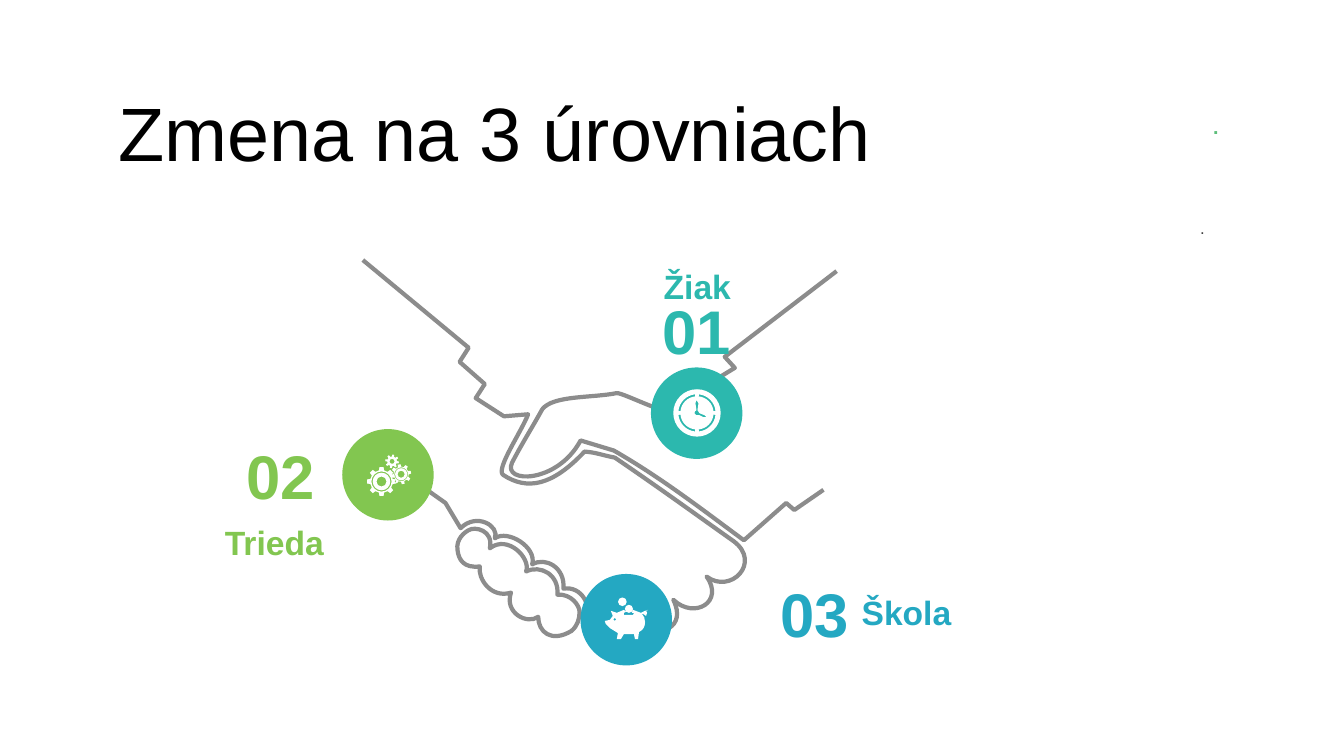
from dataclasses import dataclass
from math import cos, radians, sin, tan

from lxml import etree
from pptx import Presentation
from pptx.dml.color import RGBColor
from pptx.enum.shapes import MSO_SHAPE
from pptx.enum.text import MSO_ANCHOR, MSO_AUTO_SIZE, PP_ALIGN
from pptx.oxml.ns import qn
from pptx.util import Pt

ELLIPSE = MSO_SHAPE.OVAL
TOP, MIDDLE = MSO_ANCHOR.TOP, MSO_ANCHOR.MIDDLE
LEFT, CENTER, RIGHT = PP_ALIGN.LEFT, PP_ALIGN.CENTER, PP_ALIGN.RIGHT
FIT_SHAPE = MSO_AUTO_SIZE.SHAPE_TO_FIT_TEXT


@dataclass(frozen=True)
class Theme:
    font: str = "Arial"
    black: str = "000000"
    white: str = "FFFFFF"
    outline: str = "8C8C8C"
    pupil: str = "2CB8AE"
    classroom: str = "82C650"
    school: str = "24A8C2"
    dark: str = "404040"
    mint: str = "5CBE7A"
    title_size: int = 54
    number_size: int = 44
    label_size: int = 24
    mark_size: int = 14
    small_size: int = 12


THEME = Theme()
GRID = 0.72
POINTS_PER_COMMAND = {"M": 1, "L": 1, "C": 3}
BADGE_SIZE = 65.3

RIGHT_HAND = """M 830 269 L 719 354 729 365 706 379 712 389 681 409
C 669 417 620 390 612 390 587 395 549 392 538 406 527 426 519 438 508 459
498 480 553 480 576 437 L 609 447 C 656 474 696 505 738 536
L 780 499 788 506 817 486"""

LEFT_HAND = """M 360 258 L 465 345 456 359 481 381 472 395 500 413 524 411
C 517 429 492 465 499 471 523 487 548 482 580 448 592 449 595 451 610 454
657 486 687 508 728 537 756 558 725 590 701 572 719 597 689 615 668 595
682 623 654 633 635 621 642 640 612 653 581 621 589 601 577 581 559 584
561 563 541 552 528 560 533 543 504 525 491 534 496 522 473 508 457 524
L 442 499 418 482 411 494 377 475"""

FINGERS = """M 454 546 C 455 555 460 564 476 562 474 574 487 594 507 588
500 608 523 620 534 612 534 627 547 638 567 626 573 621 575 614 575 607
575 601 567 589 553 590 555 570 536 560 522 567 527 554 504 530 486 544
490 526 471 522 465 526 461 528 452 535 454 546"""

PIGGY_BODY = """M 643 605 L 641 606 642 608 641 611 638 609 637 609
C 639 611 640 614 640 617 640 622 638 625 634 627
L 633 634 630 634 629 629 619 629 616 634 612 634 613 628 605 623 601 619 600 616
605 615 608 611 606 606 612 608 619 605 621 607 619 608 619 610 628 610 629 608 627 608 628 605
636 608 640 606"""

CLOCK_HANDS = """M 691 397 L 690 400 691 407 C 688 408 688 413 694 412
L 698 414 701 414 699 412 694 410 692 407 693 400"""


def trace(outline):
    segments, numbers, command = [], [], ""
    for token in outline.split():
        if token in POINTS_PER_COMMAND:
            command = token
            continue
        numbers.append(float(token))
        if len(numbers) == 2 * POINTS_PER_COMMAND[command]:
            segments.append(list(zip(numbers[::2], numbers[1::2])))
            numbers = []
    return segments


def polar(cx, cy, radius, degrees):
    angle = radians(degrees)
    return cx + radius * cos(angle), cy + radius * sin(angle)


def arc(cx, cy, radius, start, end):
    reach = radius * 4 / 3 * tan(radians(end - start) / 4)
    first, last = polar(cx, cy, radius, start), polar(cx, cy, radius, end)
    return [polar(*first, reach, start + 90), polar(*last, -reach, end + 90), last]


def circle(cx, cy, radius):
    return [[polar(cx, cy, radius, 0)]] + [arc(cx, cy, radius, start, start + 90)
                                           for start in range(0, 360, 90)]


def arc_band(cx, cy, inner, outer, start, end):
    return [[polar(cx, cy, outer, start)], arc(cx, cy, outer, start, end),
            [polar(cx, cy, inner, end)], arc(cx, cy, inner, end, start)]


def gear(cx, cy, root, tip, phase, holes):
    profile = ((root, -13), (tip, -8), (tip, 8), (root, 13))
    rim = [[polar(cx, cy, radius, phase + tooth * 45 + offset)]
           for tooth in range(8) for radius, offset in profile]
    return [rim] + [circle(cx, cy, radius) for radius in holes]


def bend_curves(shape, contours):
    nodes = iter(list(shape._element.find(".//" + qn("a:path"))))
    for segment in (segment for contour in contours for segment in contour):
        node = next(nodes)
        if node.tag == qn("a:close"):
            node = next(nodes)
        if len(segment) == 3:
            node.tag_name = None
            curve = etree.Element(qn("a:cubicBezTo"))
            node.addprevious(curve)
            for corner in (node, next(nodes), next(nodes)):
                curve.append(corner[0])
                corner.getparent().remove(corner)


def add_outline(slide, contours, fill=None, line=None, closed=True):
    scaled = [[(Pt(x * GRID), Pt(y * GRID)) for segment in contour for x, y in segment]
              for contour in contours]
    builder = slide.shapes.build_freeform(*scaled[0][0])
    for index, (start, *rest) in enumerate(scaled):
        if index:
            builder.move_to(*start)
        builder.add_line_segments(rest, close=closed)
    shape = builder.convert_to_shape()
    bend_curves(shape, contours)
    paint(shape, fill, line)


def paint(shape, fill=None, line=None):
    shape.shadow.inherit = False
    if fill:
        shape.fill.solid()
        shape.fill.fore_color.rgb = RGBColor.from_string(fill)
    else:
        shape.fill.background()
    if line:
        shape.line.color.rgb = RGBColor.from_string(line)
        shape.line.width = Pt(3)
    else:
        shape.line.fill.background()


def add_badge(slide, left, top, color):
    badge = slide.shapes.add_shape(ELLIPSE, Pt(left), Pt(top), Pt(BADGE_SIZE), Pt(BADGE_SIZE))
    paint(badge, color)


def add_label(slide, words, box, size, color, bold=True, align=LEFT, anchor=TOP):
    frame = slide.shapes.add_textbox(*map(Pt, box)).text_frame
    frame.word_wrap = True
    frame.auto_size = FIT_SHAPE
    frame.vertical_anchor = anchor
    frame.text = words
    paragraph = frame.paragraphs[0]
    paragraph.alignment = align
    run = paragraph.runs[0]
    run.font.name = THEME.font
    run.font.size = Pt(size)
    run.font.bold = bold
    run.font.color.rgb = RGBColor.from_string(color)
    return run


def add_number(slide, words, left, top, color):
    run = add_label(slide, words, (left, top, 75.6, 60.5), THEME.number_size, color, align=CENTER)
    edge = etree.Element(qn("a:ln"), w=str(Pt(1)))
    fill = etree.SubElement(edge, qn("a:solidFill"))
    etree.SubElement(fill, qn("a:srgbClr"), val=THEME.white)
    run.font._element.insert(0, edge)


def add_icons(slide):
    piggy = [trace(PIGGY_BODY), circle(610, 614.5, 1.5), circle(624, 604, 4), circle(617.5, 597, 4.3)]
    clock_center = (691.5, 409.7)
    clock = [circle(*clock_center, 23.5), trace(CLOCK_HANDS)]
    clock += [arc_band(*clock_center, 16.5, 18.5, start + 6, start + 84) for start in range(0, 360, 90)]
    gears = (gear(378.5, 477.7, 11.3, 14.5, 0, (10, 8.7, 5))
             + gear(398, 470.5, 7.5, 10, -12, (6.8, 6, 3.5))
             + gear(389, 457.7, 4.8, 6.8, -80, (2.5,)))
    for icon in (piggy, clock, gears):
        add_outline(slide, icon, fill=THEME.white)


def main():
    deck = Presentation()
    deck.slide_width, deck.slide_height = Pt(960), Pt(540)
    slide = deck.slides.add_slide(deck.slide_layouts[6])
    add_label(slide, "Zmena na 3 úrovniach", (77.8, 57.6, 607.7, 72),
              THEME.title_size, THEME.black, bold=False, anchor=MIDDLE)
    for hand, closed in ((RIGHT_HAND, False), (LEFT_HAND, False), (FINGERS, True)):
        add_outline(slide, [trace(hand)], line=THEME.outline, closed=closed)
    levels = (
        ("01", "Žiak", THEME.pupil, (465, 262.5), (460, 206), (356.4, 186.5, 172.8, 36), RIGHT),
        ("02", "Trieda", THEME.classroom, (244.5, 306.5), (162.7, 309), (72, 369.4, 166.3, 36), RIGHT),
        ("03", "Škola", THEME.school, (414.7, 410), (544.3, 408.2), (608.4, 419, 208, 36), LEFT),
    )
    for number, level, color, badge, number_at, level_box, align in levels:
        add_badge(slide, *badge, color)
        add_number(slide, number, *number_at, color)
        add_label(slide, level, level_box, THEME.label_size, color, align=align)
    add_icons(slide)
    add_label(slide, ".", (682.6, 151.9, 185, 21.6), THEME.small_size, THEME.dark, bold=False, align=RIGHT)
    add_label(slide, ".", (692.6, 78.5, 185, 23.8), THEME.mark_size, THEME.mint, align=RIGHT)
    deck.save("out.pptx")


if __name__ == "__main__":
    main()
